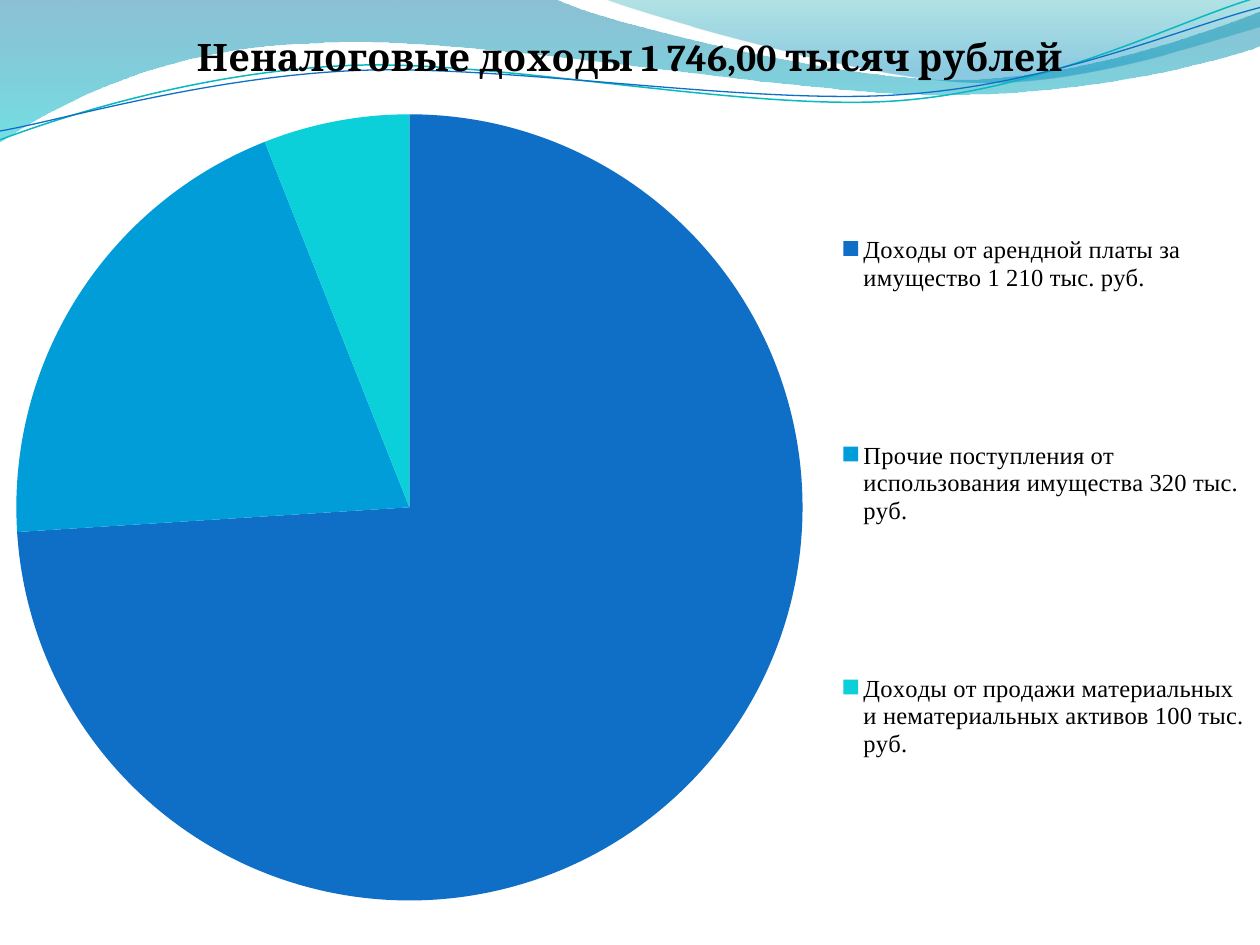
from lxml import etree
from pptx import Presentation
from pptx.chart.data import CategoryChartData
from pptx.dml.color import RGBColor
from pptx.enum.chart import XL_CHART_TYPE, XL_LEGEND_POSITION
from pptx.oxml import parse_xml
from pptx.oxml.ns import nsdecls, qn
from pptx.util import Inches, Pt

COLORS = {
    "text": "000000",
    "rent": "0F6FC6",
    "other": "009DD9",
    "sales": "0BD0D9",
    "teal_line": "0AB8BF",
    "blue_line": "0F6FC6",
    "wave_top": "0074A1",
    "wave_bottom": "00C6CF",
    "crest_top": "00A1A9",
    "crest_bottom": "008BBF",
}
TITLE = "Неналоговые доходы 1 746,00 тысяч рублей"
INCOME = [
    ("Доходы от арендной платы за имущество 1 210 тыс. руб.", 74, "rent"),
    ("Прочие поступления от использования имущества 320 тыс. руб.", 20, "other"),
    ("Доходы от продажи материальных и нематериальных активов 100 тыс. руб.", 6, "sales"),
]

# Outlines in inches: a pair is a straight step, six numbers are a Bezier curve.
WAVE = [
    (0, 0), (4.4, -0.01),
    (4.76, 0.17, 6.64, 0.63, 7.58, 0.63), (8.53, 0.63, 9.58, 0.26, 10, 0.09),
    (10.01, 0.36),
    (9.83, 0.44, 8.7, 0.76, 7.46, 0.75), (6.22, 0.75, 3.82, 0.28, 2.57, 0.34),
    (1.29, 0.36, 0.46, 0.83, -0.01, 1.13), (0, 0),
]
CREST = [
    (4.79, -0.01),
    (5.09, 0.11, 6.82, 0.62, 7.69, 0.65), (8.56, 0.69, 9.61, 0.32, 10, 0.21),
    (10, 0), (4.79, -0.01),
]
TEAL_LINE = [
    (0, 1.11),
    (0.48, 0.93, 1.58, 0.57, 2.77, 0.52), (3.95, 0.47, 5.93, 0.89, 7.13, 0.8),
    (8.33, 0.71, 9.38, 0.15, 9.98, -0.02),
]
BLUE_LINE = [
    (0, 1.04),
    (0.47, 0.96, 1.64, 0.61, 2.83, 0.56), (4.03, 0.51, 5.97, 0.84, 7.17, 0.75),
    (8.36, 0.67, 9.41, 0.21, 10, 0.06),
]


def rgb(name):
    return RGBColor.from_string(COLORS[name])


def add_outline(slide, outline, close):
    """Draw an outline, joining the three points of each curve into one Bezier step."""
    points = [(Inches(step[i]), Inches(step[i + 1]))
              for step in outline for i in range(0, len(step), 2)]
    builder = slide.shapes.build_freeform(*points[0])
    builder.add_line_segments(points[1:], close=close)
    shape = builder.convert_to_shape()
    shape.shadow.inherit = False

    segments = iter(list(shape.element.iter(qn("a:lnTo"))))
    for step in outline[1:]:
        segment = next(segments)
        if len(step) == 6:
            segment.tag = qn("a:cubicBezTo")
            for _ in range(2):
                extra = next(segments)
                segment.append(extra[0])
                extra.getparent().remove(extra)
    return shape


def add_wave(slide, outline, stops):
    """Draw a closed wave with a vertical gradient of (position, colour, opacity)."""
    wave = add_outline(slide, outline, close=True)
    wave.line.fill.background()
    wave.fill.background()
    stop_xml = "".join(
        f'<a:gs pos="{position * 1000}"><a:srgbClr val="{COLORS[color]}">'
        f'<a:alpha val="{opacity * 1000}"/></a:srgbClr></a:gs>'
        for position, color, opacity in stops)
    properties = wave.element.spPr
    properties.replace(properties.find(qn("a:noFill")), parse_xml(
        f'<a:gradFill {nsdecls("a")} rotWithShape="1"><a:gsLst>{stop_xml}</a:gsLst>'
        '<a:lin ang="5400000" scaled="0"/></a:gradFill>'))


def add_curve(slide, outline, color, width):
    curve = add_outline(slide, outline, close=False)
    curve.fill.background()
    curve.line.color.rgb = rgb(color)
    curve.line.width = Pt(width)


def set_layout(element, after, box, inner=False):
    """Fix a chart part at x, y, w, h, given as shares of the chart."""
    for old in element.findall(qn("c:layout")):
        element.remove(old)
    layout = etree.Element(qn("c:layout"))
    manual = etree.SubElement(layout, qn("c:manualLayout"))
    settings = [("layoutTarget", "inner")] if inner else []
    settings += [("xMode", "edge"), ("yMode", "edge"), *zip("xywh", box)]
    for tag, value in settings:
        etree.SubElement(manual, qn(f"c:{tag}")).set("val", str(value))
    if after is None:
        element.insert(0, layout)
    else:
        after.addnext(layout)


def set_font(font, name, size, bold=False):
    font.name = name
    font.size = Pt(size)
    font.bold = bold
    font.color.rgb = rgb("text")


def add_income_pie(slide, width, height):
    data = CategoryChartData()
    data.categories = [label for label, _, _ in INCOME]
    data.add_series("Series 1", [share for _, share, _ in INCOME])
    chart = slide.shapes.add_chart(XL_CHART_TYPE.PIE, 0, 0, width, height, data).chart
    set_font(chart.font, "Cambria", 18)

    chart.has_title = True
    chart.chart_title.text_frame.text = TITLE
    set_font(chart.chart_title.text_frame.paragraphs[0].font, "Cambria", 21.6, bold=True)

    pie = chart.plots[0]
    pie.vary_by_categories = True
    for index, (_, _, color) in enumerate(INCOME):
        sector = pie.series[0].points[index].format
        sector.fill.solid()
        sector.fill.fore_color.rgb = rgb(color)
        sector.line.fill.background()

    chart.has_legend = True
    legend = chart.legend
    legend.position = XL_LEGEND_POSITION.RIGHT
    legend.include_in_layout = False
    set_font(legend.font, "Times New Roman", 14)

    plot_area = chart.element.find(".//" + qn("c:plotArea"))
    set_layout(plot_area, None, (0.013, 0.121, 0.624, 0.832), inner=True)
    legend_part = chart.element.find(".//" + qn("c:legend"))
    set_layout(legend_part, legend_part.find(qn("c:legendPos")), (0.667, 0.091, 0.323, 0.87))


def main():
    deck = Presentation()
    deck.slide_width, deck.slide_height = Inches(10), Inches(7.5)
    slide = deck.slides.add_slide(deck.slide_layouts[6])
    add_wave(slide, WAVE, [(0, "wave_top", 45), (100, "wave_bottom", 55)])
    add_wave(slide, CREST, [(0, "crest_top", 30), (80, "crest_bottom", 45)])
    add_curve(slide, TEAL_LINE, "teal_line", 0.85)
    add_curve(slide, BLUE_LINE, "blue_line", 0.75)
    add_income_pie(slide, deck.slide_width, deck.slide_height)
    deck.save("out.pptx")


if __name__ == "__main__":
    main()
